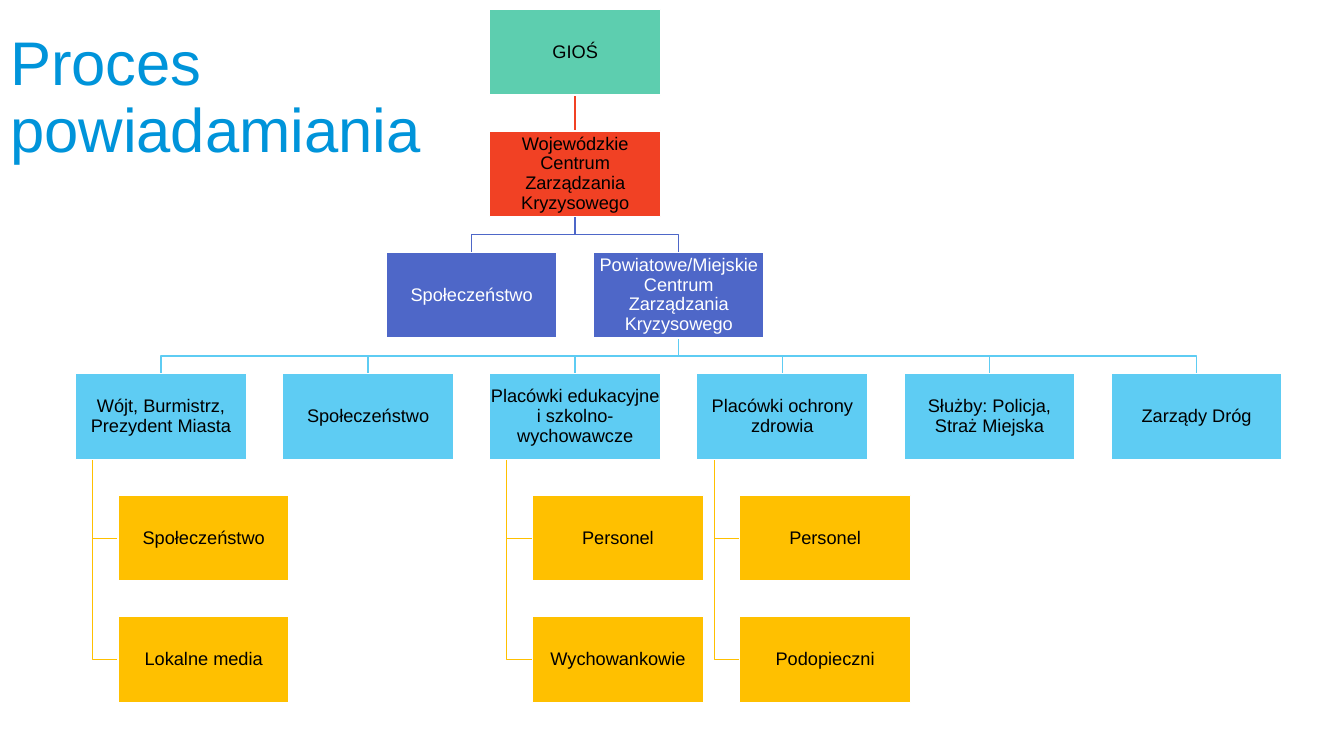
from dataclasses import dataclass

from pptx import Presentation
from pptx.dml.color import RGBColor
from pptx.enum import shapes, text
from pptx.oxml import ns
from pptx.util import Cm, Pt


@dataclass(frozen=True)
class Theme:
    font: str = "Arial"
    title_size: int = 44
    box_size: int = 13
    title: str = "0094DA"
    dark: str = "000000"
    light: str = "FFFFFF"
    # One fill per row of the chart
    rows: tuple = ("5DCEAF", "F14124", "4E67C8", "5ECCF3", "FFC000", "FFC000")


theme = Theme()

# Grid in centimetres
LEFT, TOP = 1.9, 0.24
COL_STEP, ROW_STEP = 5.22, 3.06
BOX_W, BOX_H = 4.31, 2.16
INDENT, SPINE = BOX_W / 4, BOX_W / 10
FIRST_HANGING_ROW = 4

# Text, parent's index, column, row
nodes = [
    ("GIOŚ", None, 2, 0),
    ("Wojewódzkie Centrum Zarządzania Kryzysowego", 0, 2, 1),
    ("Społeczeństwo", 1, 1.5, 2),
    ("Powiatowe/Miejskie Centrum Zarządzania Kryzysowego", 1, 2.5, 2),
    ("Wójt, Burmistrz, Prezydent Miasta", 3, 0, 3),
    ("Społeczeństwo", 3, 1, 3),
    ("Placówki edukacyjne i szkolno-wychowawcze", 3, 2, 3),
    ("Placówki ochrony zdrowia", 3, 3, 3),
    ("Służby: Policja, Straż Miejska", 3, 4, 3),
    ("Zarządy Dróg", 3, 5, 3),
    ("Społeczeństwo", 4, 0, 4),
    ("Lokalne media", 4, 0, 5),
    ("Personel", 6, 2, 4),
    ("Wychowankowie", 6, 2, 5),
    ("Personel", 7, 3, 4),
    ("Podopieczni", 7, 3, 5),
]


def box_corner(col, row):
    indent = INDENT if row >= FIRST_HANGING_ROW else 0
    return LEFT + col * COL_STEP + indent, TOP + row * ROW_STEP


def style_text(p, size, color, align):
    p.alignment = align
    p.line_spacing = 0.9
    p.font.name = theme.font
    p.font.size = Pt(size)
    p.font.color.rgb = RGBColor.from_string(color)


prs = Presentation()
prs.slide_width, prs.slide_height = Cm(33.87), Cm(19.05)
s = prs.slides.add_slide(prs.slide_layouts[5])

# Title
title = s.shapes.title
title.left, title.top, title.width, title.height = Cm(0), Cm(0.66), Cm(25.45), Cm(3.68)
tf = title.text_frame
tf.text = "Proces\vpowiadamiania"
tf.vertical_anchor = text.MSO_ANCHOR.MIDDLE
style_text(tf.paragraphs[0], theme.title_size, theme.title, text.PP_ALIGN.LEFT)

# Lines from each parent to its child
for _, parent, col, row in nodes:
    if parent is None:
        continue
    x, y = box_corner(col, row)
    px, py = box_corner(*nodes[parent][2:])
    py += BOX_H
    hanging = row >= FIRST_HANGING_ROW
    if hanging:
        spine, middle = px + SPINE, y + BOX_H / 2
        points = [(spine, py), (spine, middle), (x, middle)]
    else:
        start, end, bend = px + BOX_W / 2, x + BOX_W / 2, (py + y) / 2
        points = [(start, py), (start, bend), (end, bend), (end, y)]
    points = [(Cm(a), Cm(b)) for a, b in points]
    if points[0][0] == points[-1][0]:
        link = s.shapes.add_connector(
            shapes.MSO_CONNECTOR.STRAIGHT, *points[0], *points[-1])
        link._element.spPr.append(
            link._element.makeelement(ns.qn("a:effectLst"), {}))
        ln = link.line
    else:
        path_builder = s.shapes.build_freeform(*points[0])
        path_builder.add_line_segments(points[1:], close=False)
        link = path_builder.convert_to_shape()
        link.fill.background()
        link.shadow.inherit = False
        ln = link.line
    ln.color.rgb = RGBColor.from_string(theme.rows[row])
    ln.width = Pt(0.5 if hanging else 1)
    # Keep the effect list after the line properties
    for effects in link._element.spPr.findall(ns.qn("a:effectLst")):
        link._element.spPr.append(effects)

# Boxes
for label, _, col, row in nodes:
    x, y = box_corner(col, row)
    sp = s.shapes.add_shape(
        shapes.MSO_SHAPE.RECTANGLE, Cm(x), Cm(y), Cm(BOX_W), Cm(BOX_H))
    sp.shadow.inherit = False
    sp.fill.solid()
    sp.fill.fore_color.rgb = RGBColor.from_string(theme.rows[row])
    sp.line.color.rgb = RGBColor.from_string(theme.light)
    sp.line.width = Pt(1)
    tf = sp.text_frame
    tf.word_wrap = True
    tf.vertical_anchor = text.MSO_ANCHOR.MIDDLE
    tf.margin_left = tf.margin_right = tf.margin_top = tf.margin_bottom = Cm(0.02)
    tf.text = label
    color = theme.light if row == 2 else theme.dark
    style_text(tf.paragraphs[0], theme.box_size, color, text.PP_ALIGN.CENTER)

prs.save("out.pptx")
